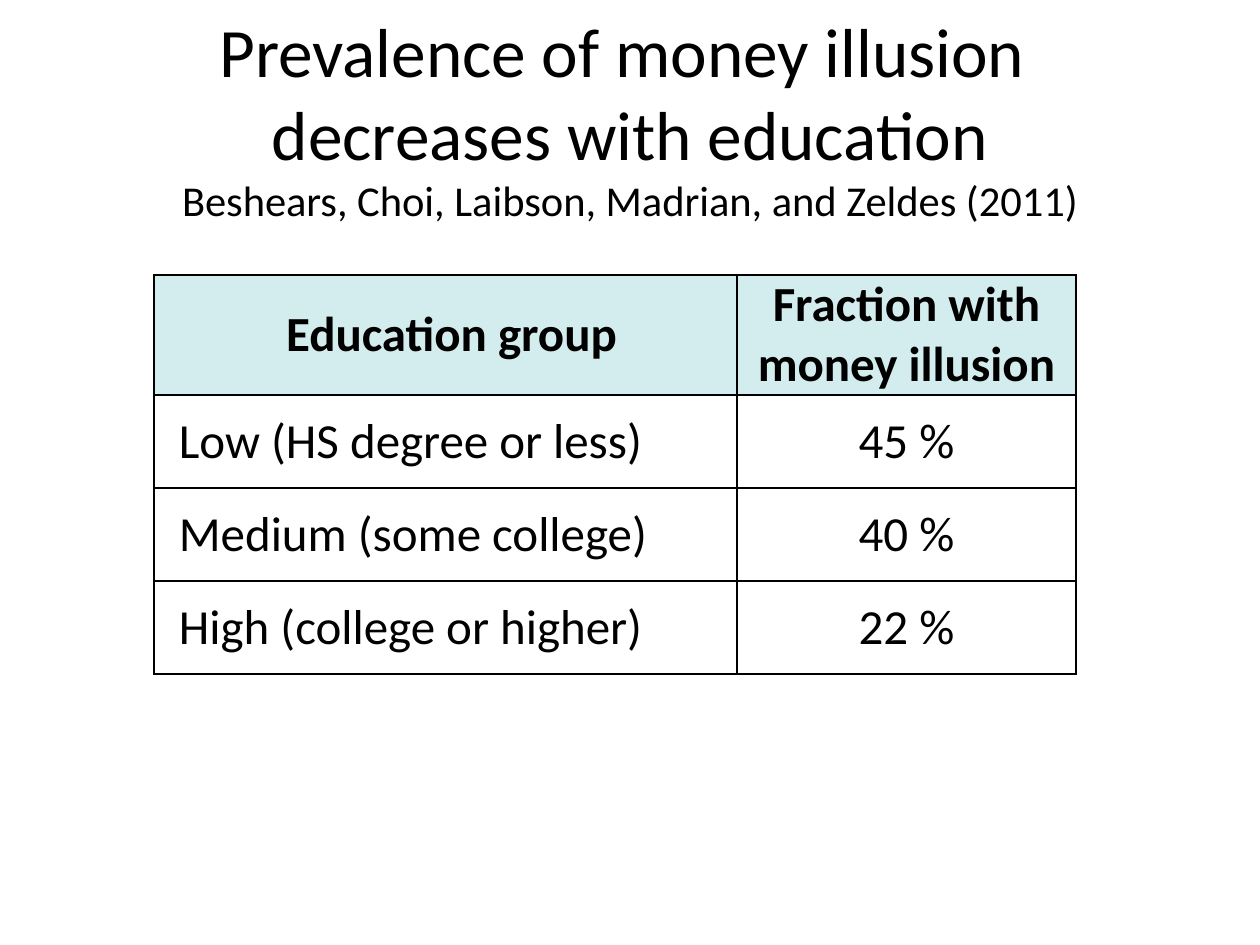
from lxml import etree
from pptx import Presentation
from pptx import util as u
from pptx.dml.color import RGBColor
from pptx.enum import text
from pptx.oxml import ns

PX = u.Inches(1) // 126
BLACK = RGBColor(0x00, 0x00, 0x00)
HEADER_FILL = RGBColor(0xD3, 0xEC, 0xED)
FONT = "Calibri"

TITLE_LINES = [
    ("Prevalence of money illusion ", 39.6),
    ("decreases with education", 39.6),
    ("Beshears, Choi, Laibson, Madrian, and Zeldes (2011)", 24.3),
]
ROWS = [
    ("Education group", "Fraction with money illusion"),
    ("Low (HS degree or less)", "45 %"),
    ("Medium (some college)", "40 %"),
    ("High (college or higher)", "22 %"),
]
COLUMN_WIDTHS = (583, 339)
ROW_HEIGHTS = (120, 93, 93, 93)
CELL_MARGINS = ((25, 6, 13, 6), (9, 0, 9, 0))  # left, top, right, bottom


def px(*lengths):
    return [u.Emu(length * PX) for length in lengths]


def style_font(font, size, bold=False):
    font.name, font.size, font.bold = FONT, u.Pt(size), bold
    font.color.rgb = BLACK


def add_title(page, left, top, width, height):
    title = page.shapes.title
    title.left, title.top, title.width, title.height = px(left, top, width, height)
    frame = title.text_frame
    frame.auto_size = text.MSO_AUTO_SIZE.NONE
    frame.vertical_anchor = text.MSO_ANCHOR.MIDDLE
    para = frame.paragraphs[0]
    para.alignment = text.PP_ALIGN.CENTER
    for index, (line, size) in enumerate(TITLE_LINES):
        if index:
            para.add_line_break()
        span = para.add_run()
        span.text = line
        style_font(span.font, size)


def set_borders(cell, widths):
    """Draw black cell borders; widths maps each side's tag to points."""
    properties = cell._tc.get_or_add_tcPr()
    for index, (side, width) in enumerate(widths.items()):
        line = etree.Element(ns.qn(f"a:{side}"), w=str(u.Pt(width)))
        fill = etree.SubElement(line, ns.qn("a:solidFill"))
        etree.SubElement(fill, ns.qn("a:srgbClr"), val=str(BLACK))
        properties.insert(index, line)


def format_cell(cell, row, column):
    header = row == 0
    cell.vertical_anchor = text.MSO_ANCHOR.MIDDLE
    (cell.margin_left, cell.margin_top,
     cell.margin_right, cell.margin_bottom) = px(*CELL_MARGINS[column])
    if header:
        cell.fill.solid()
        cell.fill.fore_color.rgb = HEADER_FILL
    else:
        cell.fill.background()
    para = cell.text_frame.paragraphs[0]
    centred = header or column == 1
    para.alignment = text.PP_ALIGN.CENTER if centred else text.PP_ALIGN.LEFT
    style_font(para.font, 28, header)
    set_borders(cell, {"lnL": 1, "lnR": 1,
                       "lnT": 1.5 if row == 1 else 1,
                       "lnB": 1.5 if header else 1})


def add_education_table(page, left, top):
    box = px(left, top, sum(COLUMN_WIDTHS), sum(ROW_HEIGHTS))
    table = page.shapes.add_table(len(ROWS), len(COLUMN_WIDTHS), *box).table
    table.first_row = table.horz_banding = False
    for column, width in zip(table.columns, px(*COLUMN_WIDTHS)):
        column.width = width
    for row, height in zip(table.rows, px(*ROW_HEIGHTS)):
        row.height = height
    for row, values in enumerate(ROWS):
        for column, value in enumerate(values):
            cell = table.cell(row, column)
            cell.text = value
            format_cell(cell, row, column)


def main():
    deck = Presentation()
    deck.slide_width, deck.slide_height = px(1260, 945)
    page = deck.slides.add_slide(deck.slide_layouts[5])
    add_title(page, 63, 38, 1134, 157)
    add_education_table(page, 154, 275)
    deck.save("out.pptx")


if __name__ == "__main__":
    main()
